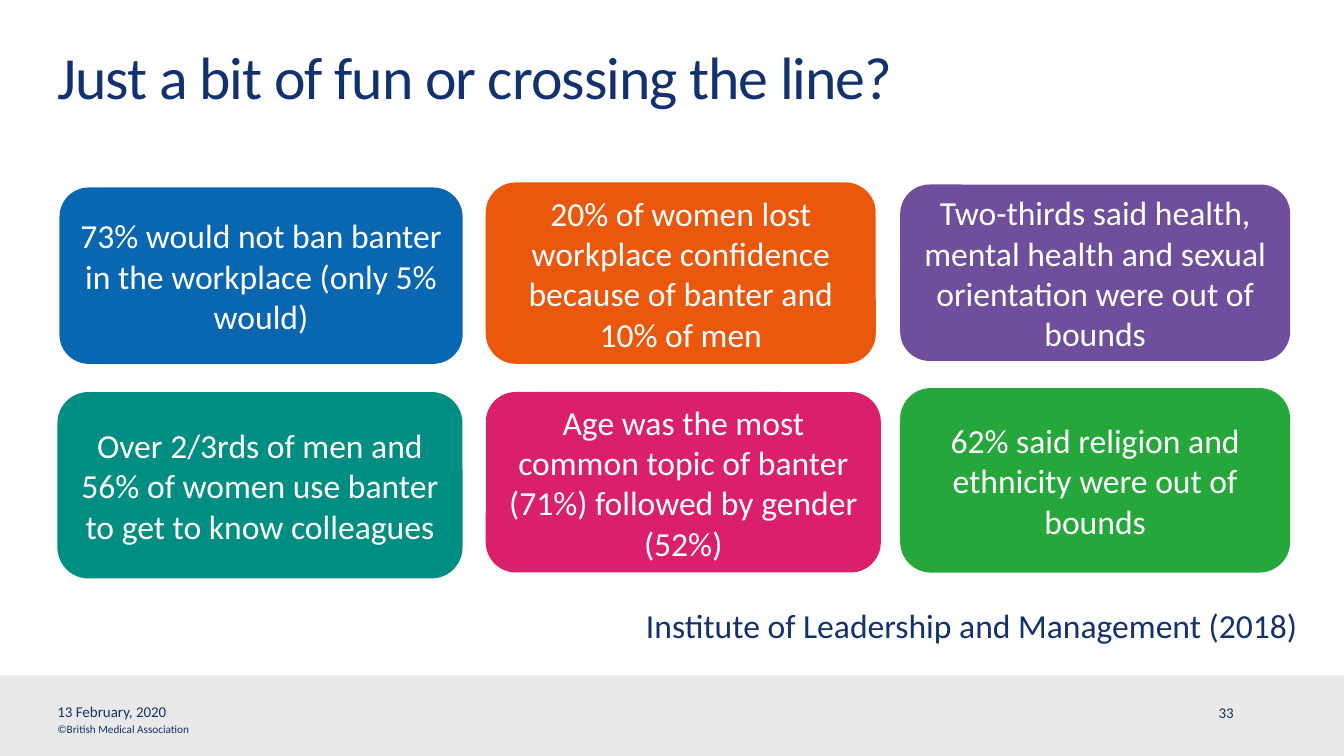
"""Build the slide on workplace banter survey findings."""
from pptx import Presentation
from pptx.dml.color import RGBColor
from pptx.enum.shapes import MSO_SHAPE
from pptx.enum.text import MSO_ANCHOR, MSO_AUTO_SIZE, PP_ALIGN
from pptx.util import Pt

FONT = "Calibri"
NAVY = RGBColor(0x13, 0x31, 0x6E)
WHITE = RGBColor(0xFF, 0xFF, 0xFF)
GREY = RGBColor(0xE9, 0xE9, 0xE9)
BLUE = RGBColor(0x09, 0x67, 0xB1)
TEAL = RGBColor(0x00, 0x8E, 0x82)
ORANGE = RGBColor(0xEA, 0x58, 0x0D)
PINK = RGBColor(0xDA, 0x1F, 0x6C)
PURPLE = RGBColor(0x6F, 0x4F, 0x9B)
GREEN = RGBColor(0x25, 0xA7, 0x3B)

LEFT_MARGIN = 41
FINDINGS = [
    ((42.5, 133.9, 288, 126), BLUE,
     "73% would not ban banter in the workplace (only 5% would)"),
    ((LEFT_MARGIN, 280, 289.4, 133.2), TEAL,
     "Over 2/3rds of men and 56% of women use banter to get to know colleagues"),
    ((347, 130.3, 278.6, 129.6), ORANGE,
     "20% of women lost workplace confidence because of banter and 10% of men"),
    ((347, 280, 282.2, 128.9), PINK,
     "Age was the most common topic of banter (71%) followed by gender (52%)"),
    ((643, 131.8, 278.6, 126), PURPLE,
     "Two-thirds said health, mental health and sexual orientation were out of bounds"),
    ((643, 277.2, 278.6, 131.8), GREEN,
     "62% said religion and ethnicity were out of bounds"),
]


def points(box):
    """Convert the numbers of a box to point lengths."""
    return [Pt(value) for value in box]


def add_text(paragraph, text, size, color):
    """Add one formatted run to a paragraph and return it."""
    run = paragraph.add_run()
    run.text = text
    run.font.name = FONT
    run.font.size = Pt(size)
    run.font.color.rgb = color
    return run


def clear_margins(text_frame):
    """Remove the inner margins of a text frame."""
    text_frame.margin_left = text_frame.margin_right = 0
    text_frame.margin_top = text_frame.margin_bottom = 0


def add_filled_shape(slide, kind, box, color):
    """Add a flat shape without outline or shadow."""
    shape = slide.shapes.add_shape(kind, *points(box))
    shape.shadow.inherit = False
    shape.fill.solid()
    shape.fill.fore_color.rgb = color
    shape.line.fill.background()
    return shape


def add_finding(slide, box, color, text):
    """Add a rounded card holding one survey finding."""
    card = add_filled_shape(slide, MSO_SHAPE.ROUNDED_RECTANGLE, box, color)
    text_frame = card.text_frame
    text_frame.word_wrap = True
    text_frame.vertical_anchor = MSO_ANCHOR.MIDDLE
    paragraph = text_frame.paragraphs[0]
    paragraph.alignment = PP_ALIGN.CENTER
    add_text(paragraph, text, 24, WHITE)


def add_label(slide, box, text, size):
    """Add a navy text box and return its text frame."""
    text_frame = slide.shapes.add_textbox(*points(box)).text_frame
    text_frame.word_wrap = True
    text_frame.auto_size = MSO_AUTO_SIZE.SHAPE_TO_FIT_TEXT
    add_text(text_frame.paragraphs[0], text, size, NAVY)
    return text_frame


def add_footer_label(slide, box, text, size):
    """Add a small footer label without margins."""
    text_frame = add_label(slide, box, text, size)
    text_frame.vertical_anchor = MSO_ANCHOR.MIDDLE
    clear_margins(text_frame)


def set_title(slide, text):
    """Place and format the title placeholder."""
    title = slide.shapes.title
    title.left, title.top, title.width, title.height = points(
        (LEFT_MARGIN, 34.6, 742.3, 51.8))
    text_frame = title.text_frame
    text_frame.word_wrap = True
    text_frame.auto_size = MSO_AUTO_SIZE.NONE
    text_frame.vertical_anchor = MSO_ANCHOR.TOP
    clear_margins(text_frame)
    paragraph = text_frame.paragraphs[0]
    paragraph.alignment = PP_ALIGN.LEFT
    paragraph.line_spacing = Pt(45.3)
    run = add_text(paragraph, text, 42.7, NAVY)
    run.font._element.set("spc", "-70")


def main():
    """Build and save the presentation."""
    presentation = Presentation()
    presentation.slide_width, presentation.slide_height = Pt(960), Pt(540)
    slide = presentation.slides.add_slide(presentation.slide_layouts[5])

    add_filled_shape(slide, MSO_SHAPE.RECTANGLE, (0, 482.4, 960, 57.6), GREY)
    set_title(slide, "Just a bit of fun or crossing the line?")
    for box, color, text in FINDINGS:
        add_finding(slide, box, color, text)
    add_label(slide, (454.3, 428.4, 503.3, 36),
              "Institute of Leadership and Management (2018)", 24)
    add_footer_label(slide, (LEFT_MARGIN, 501.8, 303.8, 13), "13 February, 2020", 10.7)
    add_footer_label(slide, (LEFT_MARGIN, 516.2, 199.4, 9.4),
                     "©British Medical Association", 8)
    add_footer_label(slide, (870.5, 502.6, 26.6, 13), "33", 10.7)

    presentation.save("out.pptx")


if __name__ == "__main__":
    main()
